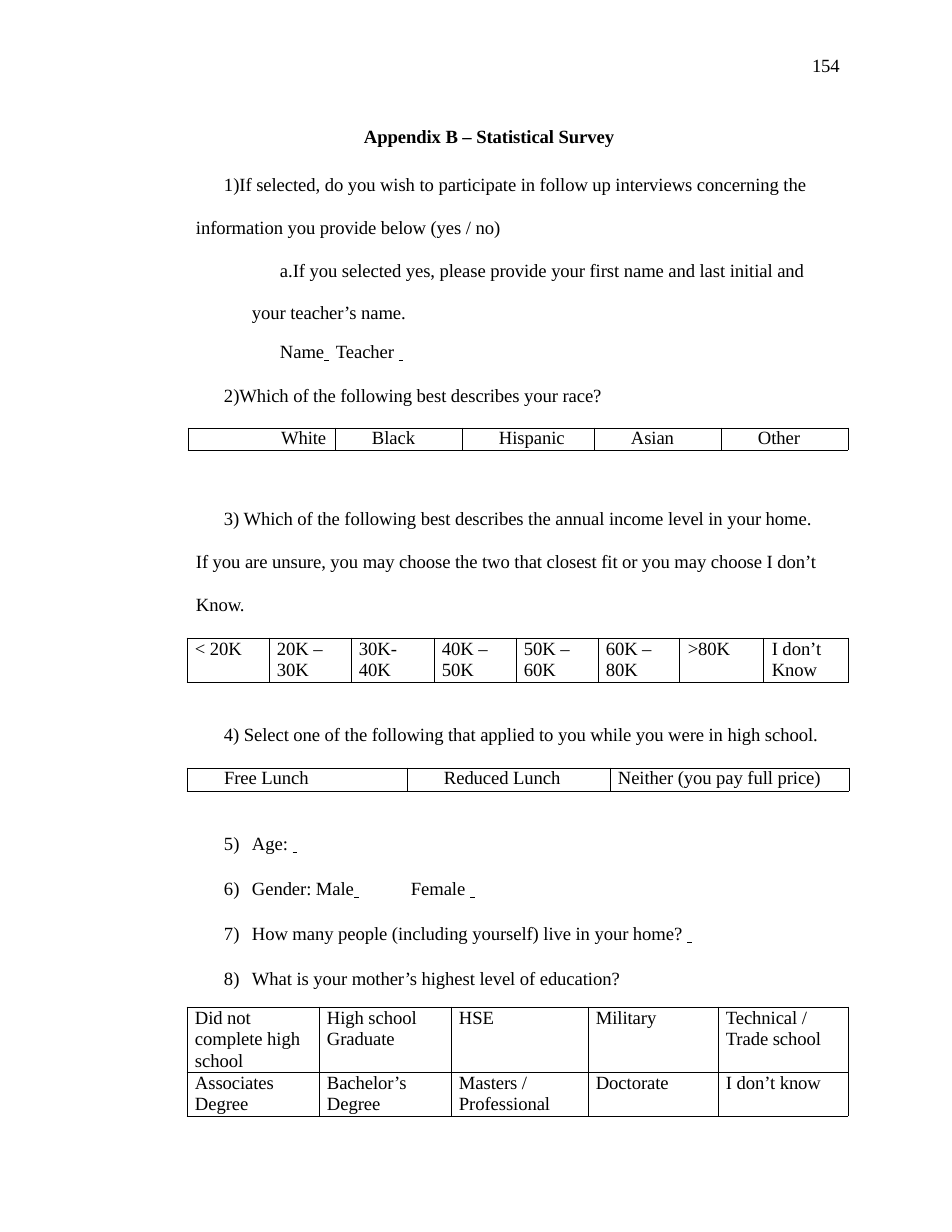
import pptx
import pptx.util
import pptx.dml.color
import pptx.oxml.ns
from lxml import etree

BLACK = pptx.dml.color.RGBColor(0, 0, 0)
FONT = "Times New Roman"
SCALE = 914400 / 112
BLANK = " \t"
TABLE_LEFT = 187
PADDING = 8
INDENT = 37


def px(length):
    return pptx.util.Emu(round(length * SCALE))


def add_element(parent, tag, **attributes):
    values = {name: str(value) for name, value in attributes.items()}
    return etree.SubElement(parent, pptx.oxml.ns.qn(tag), values)


def style_spans(para, bold=False):
    for span in para.runs:
        span.font.name = FONT
        span.font.size = pptx.util.Pt(12)
        span.font.color.rgb = BLACK
        span.font.bold = bold
        span.font.underline = span.text == BLANK
        span._r.get_or_add_rPr().set("spc", "-5")


def write_para(para, texts, margin=1, indent=0, before=0, spacing=None,
               number=None, start=1, tabs=(), bold=False):
    for text in texts:
        para.add_run().text = text
    style_spans(para, bold)
    para.space_before = pptx.util.Pt(before)
    if spacing:
        para.line_spacing = spacing
    properties = para._p.get_or_add_pPr()
    properties.set("marL", str(px(margin)))
    properties.set("indent", str(px(indent)))
    if number:
        add_element(properties, "a:buFont", typeface=FONT)
        add_element(properties, "a:buAutoNum", type=number, startAt=start)
    if tabs:
        stops = add_element(properties, "a:tabLst")
        for tab in tabs:
            add_element(stops, "a:tab", pos=px(tab), algn="l")


def add_text(page, left, top, width, height, paragraphs):
    box = page.shapes.add_textbox(px(left), px(top), px(width), px(height))
    frame = box.text_frame
    frame.word_wrap = True
    frame.margin_left = frame.margin_right = frame.margin_bottom = 0
    frame.margin_top = px(1)
    for index, (texts, options) in enumerate(paragraphs):
        para = frame.add_paragraph() if index else frame.paragraphs[0]
        write_para(para, texts, **options)


def add_borders(cell):
    cell.fill.background()
    properties = cell._tc.get_or_add_tcPr()
    for index, side in enumerate(("lnL", "lnR", "lnT", "lnB")):
        line = add_element(properties, "a:" + side, w=pptx.util.Pt(0.5))
        fill = add_element(line, "a:solidFill")
        add_element(fill, "a:srgbClr", val=BLACK)
        properties.insert(index, line)


def add_grid(page, left, top, widths, heights, rows, paddings, line_height=13.4):
    frame = page.shapes.add_table(len(heights), len(widths), px(left), px(top),
                                  px(sum(widths)), px(sum(heights)))
    table = frame.table
    table.first_row = table.horz_banding = False
    for column, width in zip(table.columns, widths):
        column.width = px(width)
    for row, height, texts in zip(table.rows, heights, rows):
        row.height = px(height)
        for cell, text, padding in zip(row.cells, texts, paddings):
            cell.margin_top = cell.margin_bottom = 0
            cell.margin_left, cell.margin_right = px(padding), px(PADDING)
            cell.text_frame.text = text
            for para in cell.text_frame.paragraphs:
                para.line_spacing = pptx.util.Pt(line_height)
                style_spans(para)
            add_borders(cell)


def main():
    deck = pptx.Presentation()
    deck.slide_width, deck.slide_height = px(952), px(1232)
    page = deck.slides.add_slide(deck.slide_layouts[6])
    double = pptx.util.Pt(27.6)
    numbered = dict(number="arabicParenR", indent=28)

    add_text(page, 811, 53, 31, 26, [(["154"], dict(before=1))])
    add_text(page, 195, 124, 633, 282, [
        (["Appendix B – Statistical Survey"], dict(margin=169, before=1, bold=True)),
        (["If selected, do you wish to participate in follow up interviews "
          "concerning the information you provide below (yes / no)"],
         dict(numbered, before=2.9, spacing=double, tabs=[57])),
        (["If you selected yes, please provide your first name and last initial "
          "and your teacher’s name."],
         dict(margin=57, indent=28, spacing=double, number="alphaLcPeriod", tabs=[113])),
        (["Name", BLANK, "Teacher ", BLANK],
         dict(margin=85, before=10.1, tabs=[354, 622])),
        (["Which of the following best describes your race?"],
         dict(numbered, before=14.2, start=2, tabs=[57])),
    ])
    add_grid(page, TABLE_LEFT + 1, 428, [147, 127, 132, 127, 127], [22],
             [["White", "Black", "Hispanic", "Asian", "Other"]],
             [93] + [INDENT] * 4)

    add_text(page, 195, 506, 634, 111, [
        (["3) Which of the following best describes the annual income level in your home."],
         dict(margin=29, before=1)),
        (["If you are unsure, you may choose the two that closest fit or you may "
          "choose I don’t Know."], dict(spacing=1.92)),
    ])
    add_grid(page, TABLE_LEFT, 638, [82, 82, 83, 82, 82, 82, 84, 85], [44],
             [["< 20K", "20K –\n30K", "30K-\n40K", "40K –\n50K", "50K –\n60K",
               "60K –\n80K", ">80K", "I don’t Know"]],
             [PADDING] * 8, 13.6)

    add_text(page, 223, 722, 613, 26, [
        (["4) Select one of the following that applied to you while you were in high school."],
         dict(before=1)),
    ])
    add_grid(page, TABLE_LEFT, 768, [220, 203, 239], [23],
             [["Free Lunch", "Reduced Lunch", "Neither (you pay full price)"]],
             [INDENT, INDENT, PADDING])

    questions = [
        (["Age: ", BLANK], [112]),
        (["Gender: Male", BLANK, "Female ", BLANK], [188, 299]),
        (["How many people (including yourself) live in your home? ", BLANK], [568]),
        (["What is your mother’s highest level of education?"], []),
    ]
    add_text(page, 223, 831, 569, 155, [
        (texts, dict(margin=29, indent=-28, number="arabicParenR", start=5,
                     before=14.4 if index else 1, tabs=[29] + tabs))
        for index, (texts, tabs) in enumerate(questions)
    ])
    add_grid(page, TABLE_LEFT, 1007, [132, 132, 137, 130, 130], [65, 44],
             [["Did not complete high school", "High school Graduate", "HSE",
               "Military", "Technical / Trade school"],
              ["Associates Degree", "Bachelor’s Degree", "Masters / Professional",
               "Doctorate", "I don’t know"]],
             [PADDING] * 5, 13.8)

    deck.save("out.pptx")


if __name__ == "__main__":
    main()
